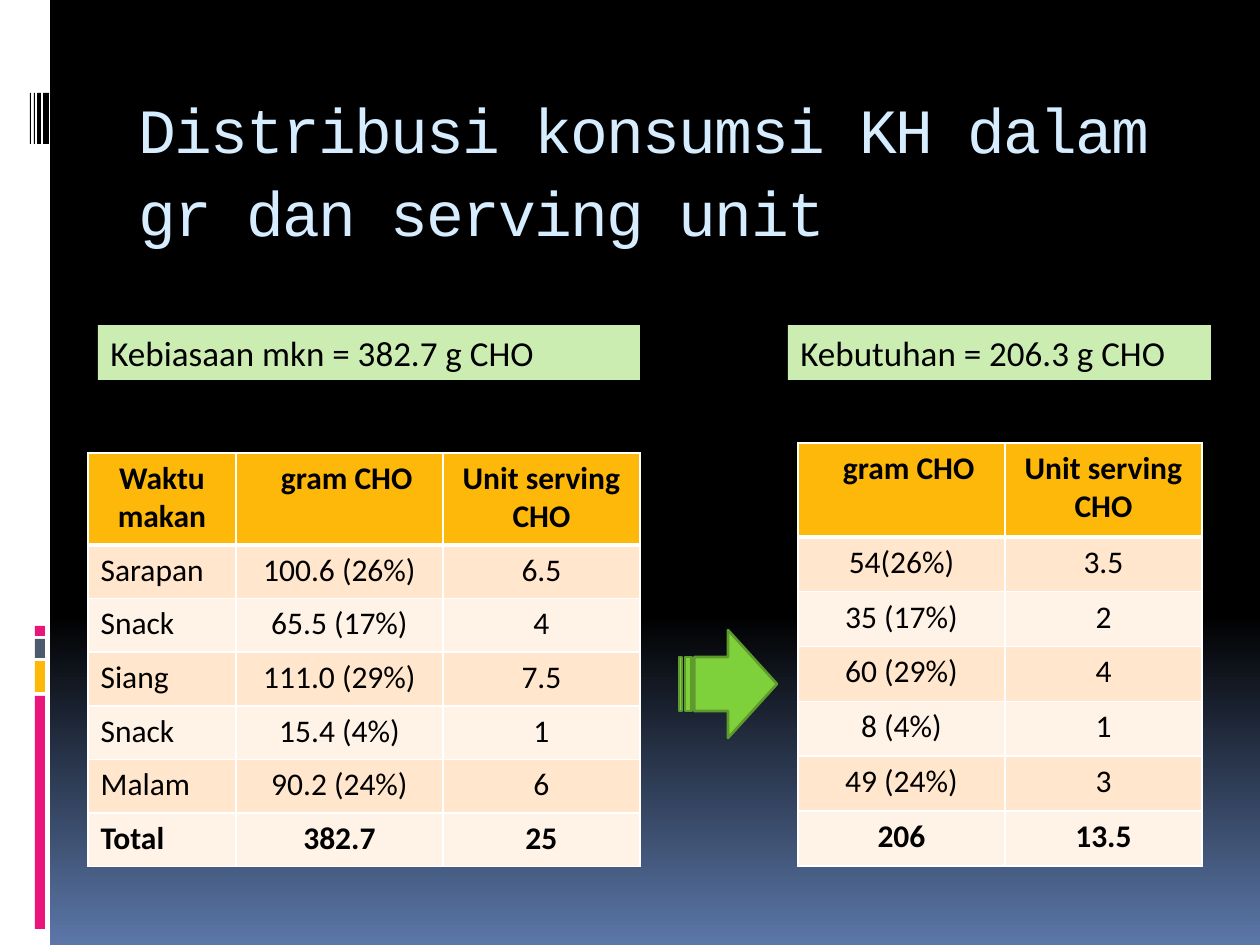
"""Build the slide on carbohydrate intake per meal, habit against need."""
import pptx
import pptx.util
import pptx.dml.color
import pptx.enum.shapes
import pptx.enum.text
import pptx.oxml.ns
import lxml.etree

COLORS = {
    "black": "000000", "white": "FFFFFF", "sky": "D6ECFF", "blue": "5B77A8",
    "pink": "EA157A", "gold": "FEB80A", "slate": "4E5B6F", "green": "7FD13B",
    "moss": "5E9B2C", "mint": "CCEDB1", "peach": "FFE6CC", "cream": "FFF3E7",
}
TITLE = "Distribusi konsumsi KH dalam gr dan serving unit"
BARS = [
    (0, 0, 50, 945, "white"),
    (35, 696, 10, 233, "pink"), (35, 661, 10, 31, "gold"),
    (35, 639, 10, 19, "slate"), (35, 626, 10, 10, "pink"),
    (43, 93, 6, 51, "black"), (37, 93, 4, 51, "black"),
    (34, 93, 1, 51, "black"), (30, 93, 1, 51, "black"),
]
LABELS = [
    ("Kebiasaan mkn = 382.7 g CHO", 98, 325, 542, 55),
    ("Kebutuhan = 206.3 g CHO", 788, 325, 423, 55),
]
HABIT = [
    ("Waktu makan", "gram CHO", "Unit serving CHO"),
    ("Sarapan", "100.6 (26%)", "6.5"),
    ("Snack", "65.5 (17%)", "4"),
    ("Siang", "111.0 (29%)", "7.5"),
    ("Snack", "15.4 (4%)", "1"),
    ("Malam", "90.2 (24%)", "6"),
    ("Total", "382.7", "25"),
]
NEED = [
    ("gram CHO", "Unit serving CHO"),
    ("54(26%)", "3.5"),
    ("35 (17%)", "2"),
    ("60 (29%)", "4"),
    ("8 (4%)", "1"),
    ("49 (24%)", "3"),
    ("206", "13.5"),
]
TABLES = [
    (HABIT, 88, 453, (148, 207, 197), 92, 414),
    (NEED, 798, 443, (207, 197), 94, 423),
]
SCALE = 914400 / 126
SHAPE = pptx.enum.shapes.MSO_SHAPE
ALIGN = pptx.enum.text.PP_ALIGN


def px(num):
    return pptx.util.Emu(round(num * SCALE))


def rgb(name):
    return pptx.dml.color.RGBColor.from_string(COLORS[name])


def paint(fill, name):
    fill.solid()
    fill.fore_color.rgb = rgb(name)


def write(frame, text, face, size, color, bold=False, align=ALIGN.LEFT):
    frame.text = text
    frame.word_wrap = True
    para = frame.paragraphs[0]
    para.alignment = align
    font = para.runs[0].font
    font.name, font.size, font.bold = face, pptx.util.Pt(size), bold
    font.color.rgb = rgb(color)
    return para


def add_shape(slide, kind, box, color):
    shape = slide.shapes.add_shape(kind, *map(px, box))
    shape.shadow.inherit = False
    paint(shape.fill, color)
    shape.line.fill.background()
    return shape


def add_edge(cell, side, width):
    main = pptx.oxml.ns.nsuri("a")
    line = lxml.etree.SubElement(
        cell._tc.get_or_add_tcPr(), f"{{{main}}}ln{side}", w=str(int(pptx.util.Pt(width))))
    fill = lxml.etree.SubElement(line, f"{{{main}}}solidFill")
    lxml.etree.SubElement(fill, f"{{{main}}}srgbClr", val=COLORS["white"])


def add_table(slide, rows, left, top, widths, head, high):
    count = len(rows)
    table = slide.shapes.add_table(
        count, len(widths), px(left), px(top), px(sum(widths)), px(high)).table
    table.first_row = table.horz_banding = False
    for col, width in zip(table.columns, widths):
        col.width = px(width)
    for r, row in enumerate(rows):
        table.rows[r].height = px((high - head) / (count - 1) if r else head)
        for c, text in enumerate(row):
            cell = table.cell(r, c)
            for side in "LRTB":
                thick = (r, side) in ((0, "B"), (1, "T"))
                add_edge(cell, side, 3 if thick else 1)
            paint(cell.fill, "gold" if r == 0 else "peach" if r % 2 else "cream")
            if text == "gram CHO":
                cell.margin_left = px(27)
            named = len(row) == 3 and c == 0 and r > 0
            write(cell.text_frame, text, "Calibri", 18, "black",
                  r in (0, count - 1), ALIGN.LEFT if named else ALIGN.CENTER)


def main():
    deck = pptx.Presentation()
    deck.slide_width, deck.slide_height = px(1260), px(945)
    slide = deck.slides.add_slide(deck.slide_layouts[6])
    back = slide.background.fill
    back.gradient()
    back.gradient_angle = 270
    for stop, spot, name in zip(back.gradient_stops, (0.65, 1), ("black", "blue")):
        stop.position = spot
        stop.color.rgb = rgb(name)

    for *box, color in BARS:
        add_shape(slide, SHAPE.RECTANGLE, box, color)

    title = slide.shapes.add_textbox(*map(px, (126, 71, 1071, 126))).text_frame
    para = write(title, TITLE, "Courier New", 36, "sky")
    para.line_spacing = 1.1
    para.runs[0].font._element.set("spc", "-100")
    title.margin_top = px(12)

    for table in TABLES:
        add_table(slide, *table)

    arrow = add_shape(slide, SHAPE.STRIPED_RIGHT_ARROW, (679, 630, 98, 108), "green")
    arrow.line.color.rgb = rgb("moss")
    arrow.line.width = pptx.util.Pt(1.5)

    for text, *box in LABELS:
        label = add_shape(slide, SHAPE.RECTANGLE, box, "mint")
        write(label.text_frame, text, "Calibri", 20, "black")

    deck.save("out.pptx")


if __name__ == "__main__":
    main()
